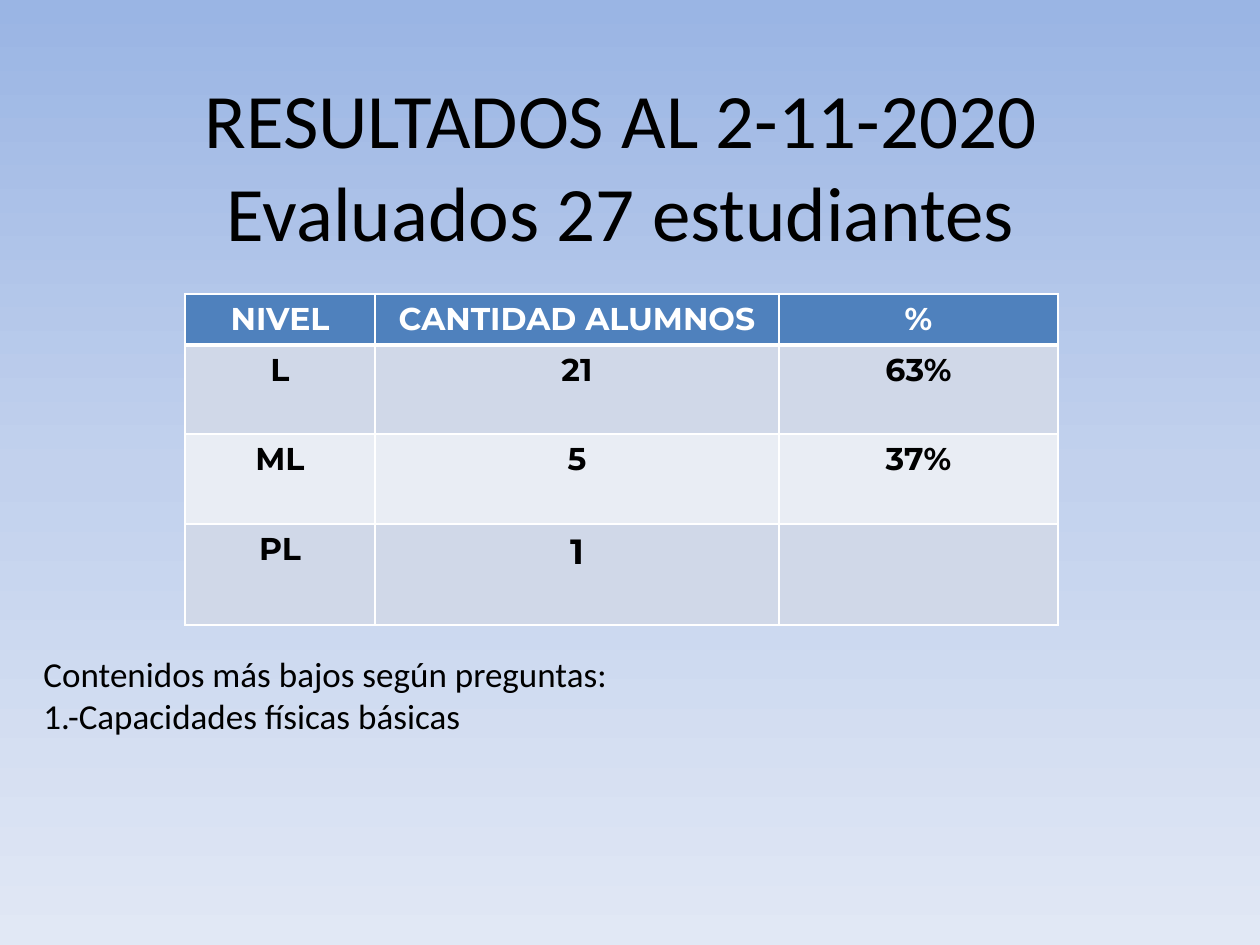
"""Build the slide with the evaluation results of 27 students."""
from copy import deepcopy
from typing import NamedTuple

from lxml.etree import SubElement
from pptx import Presentation
from pptx.dml.color import RGBColor
from pptx.enum.text import MSO_ANCHOR as Anchor, PP_ALIGN as Align
from pptx.oxml import parse_xml
from pptx.oxml.ns import nsdecls, qn
from pptx.util import Emu, Pt

EMU_PER_PX = 914400 / 126
BLACK = RGBColor(0x00, 0x00, 0x00)
WHITE = RGBColor(0xFF, 0xFF, 0xFF)
HEADER_BLUE = RGBColor(0x4F, 0x81, 0xBD)
BANDS = (RGBColor(0xD0, 0xD8, 0xE8), RGBColor(0xE9, 0xED, 0xF4))
SKY = (
    RGBColor(0x9A, 0xB5, 0xE4),
    RGBColor(0xC2, 0xD1, 0xED),
    RGBColor(0xE1, 0xE8, 0xF5),
)


class TextBlock(NamedTuple):
    left: int
    top: int
    width: int
    height: int
    size: int
    align: Align
    anchor: Anchor
    lines: tuple[str, ...]


TEXTS = (
    TextBlock(54, 55, 1134, 218, 44, Align.CENTER, Anchor.MIDDLE,
              ("RESULTADOS AL 2-11-2020\vEvaluados 27 estudiantes",)),
    TextBlock(31, 646, 1181, 97, 20, Align.LEFT, Anchor.TOP,
              ("Contenidos más bajos según preguntas:",
               "1.-Capacidades físicas básicas")),
)
RESULTS = (
    ("NIVEL", "CANTIDAD ALUMNOS", "%"),
    ("L", "21", "63%"),
    ("ML", "5", "37%"),
    ("PL", "1", ""),
)
COLUMN_WIDTHS = (190, 404, 279)
ROW_HEIGHTS = (51, 89, 90, 101)
LARGE_CELL = (3, 1)


def px(length: int) -> Emu:
    return Emu(round(length * EMU_PER_PX))


def paint_background(slide) -> None:
    fill = slide.background.fill
    fill.gradient()
    fill.gradient_angle = 270
    first_stop = next(slide.element.iter(qn("a:gs")))
    first_stop.addnext(deepcopy(first_stop))
    for index, (stop, color) in enumerate(zip(fill.gradient_stops, SKY)):
        stop.position = index / (len(SKY) - 1)
        stop.color.rgb = color


def add_text(slide, block: TextBlock) -> None:
    box = slide.shapes.add_textbox(
        px(block.left), px(block.top), px(block.width), px(block.height))
    frame = box.text_frame
    frame.word_wrap = True
    frame.vertical_anchor = block.anchor
    frame.text = "\n".join(block.lines)
    for para in frame.paragraphs:
        para.alignment = block.align
        para.font.name = "Calibri"
        para.font.size = Pt(block.size)
        para.font.color.rgb = BLACK


def add_borders(cell, top: int, bottom: int) -> None:
    properties = cell._tc.get_or_add_tcPr()
    widths = {"lnL": 1, "lnR": 1, "lnT": top, "lnB": bottom}
    for index, (side, width) in enumerate(widths.items()):
        line = parse_xml(f'<a:{side} {nsdecls("a")} w="{Pt(width)}"/>')
        solid = SubElement(line, qn("a:solidFill"))
        SubElement(solid, qn("a:srgbClr"), val=str(WHITE))
        properties.insert(index, line)


def style_cell(cell, text: str, row: int, column: int) -> None:
    header = row == 0
    cell.fill.solid()
    cell.fill.fore_color.rgb = HEADER_BLUE if header else BANDS[(row - 1) % 2]
    add_borders(cell, top=3 if row == 1 else 1, bottom=3 if header else 1)
    cell.text = text
    para = cell.text_frame.paragraphs[0]
    para.alignment = Align.CENTER
    para.font.name = "Montserrat"
    para.font.size = Pt(20 if (row, column) == LARGE_CELL else 18)
    para.font.bold = True
    para.font.color.rgb = WHITE if header else BLACK


def add_results(slide, left: int, top: int) -> None:
    table = slide.shapes.add_table(
        len(RESULTS), len(COLUMN_WIDTHS), px(left), px(top),
        px(sum(COLUMN_WIDTHS)), px(sum(ROW_HEIGHTS))).table
    for column, width in zip(table.columns, COLUMN_WIDTHS):
        column.width = px(width)
    for row, height in zip(table.rows, ROW_HEIGHTS):
        row.height = px(height)
    for row, texts in enumerate(RESULTS):
        for column, text in enumerate(texts):
            style_cell(table.cell(row, column), text, row, column)


def main() -> None:
    deck = Presentation()
    deck.slide_width, deck.slide_height = px(1260), px(945)
    page = deck.slides.add_slide(deck.slide_layouts[6])
    paint_background(page)
    title, contents = TEXTS
    add_text(page, title)
    add_results(page, 185, 294)
    add_text(page, contents)
    deck.save("out.pptx")


if __name__ == "__main__":
    main()
